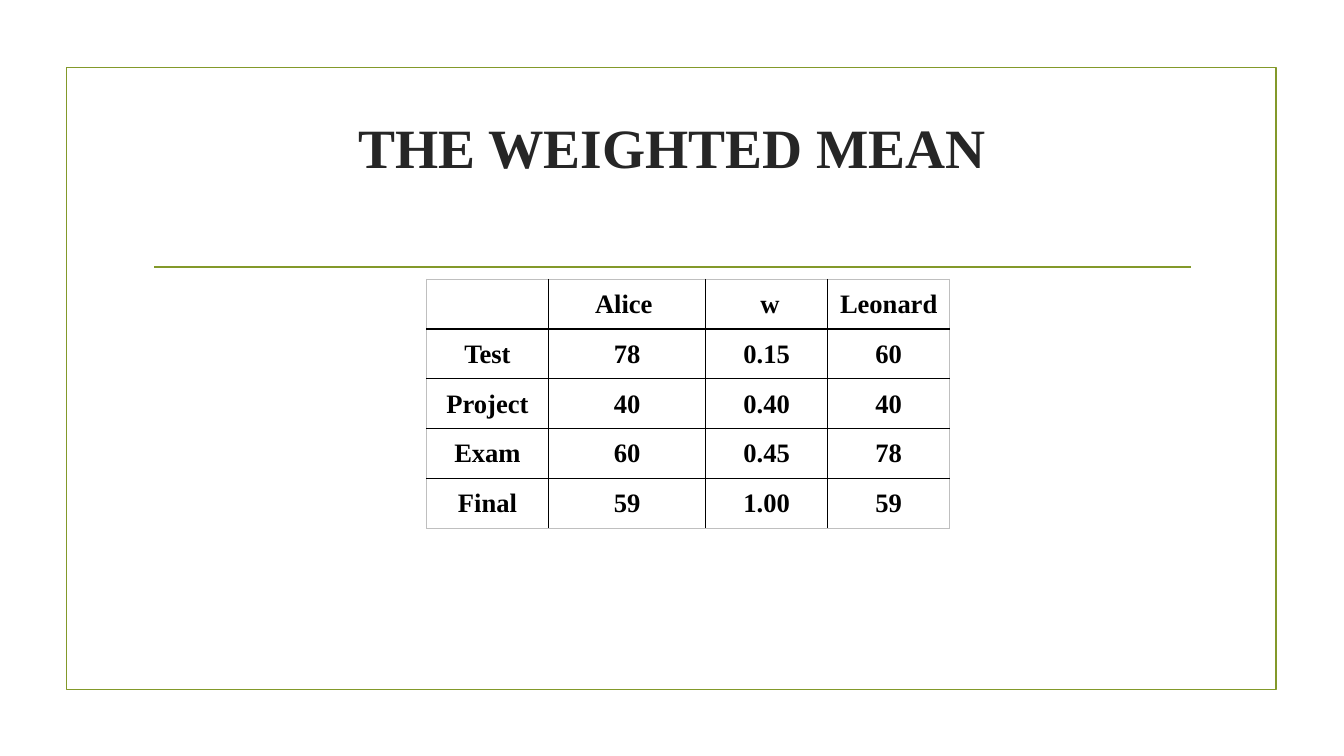
from lxml import etree
from pptx import Presentation
from pptx.dml.color import RGBColor
from pptx.enum.shapes import MSO_CONNECTOR, MSO_SHAPE
from pptx.enum.text import MSO_ANCHOR, PP_ALIGN
from pptx.oxml import parse_xml
from pptx.oxml.ns import nsdecls, qn
from pptx.util import Inches, Pt

COLORS = {"olive": "83992A", "title": "262626", "ink": "000000", "edge": "BFBFBF"}
FONT = "Times New Roman"


def add_bold_run(paragraph, text, size, color):
    run = paragraph.add_run()
    run.text = text
    run.font.name = FONT
    run.font.size = Pt(size)
    run.font.bold = True
    run.font.color.rgb = RGBColor.from_string(COLORS[color])


def set_borders(cell, sides):
    props = cell._tc.get_or_add_tcPr()
    for position, (side, is_outer) in enumerate(sides):
        width, color = (Pt(0.5), "edge") if is_outer else (Pt(1), "ink")
        props.insert(position, parse_xml(
            f'<a:ln{side} {nsdecls("a")} w="{width}"><a:solidFill>'
            f'<a:srgbClr val="{COLORS[color]}"/></a:solidFill></a:ln{side}>'))


prs = Presentation()
prs.slide_width = Inches(13.33)
prs.slide_height = Inches(7.5)
slide = prs.slides.add_slide(prs.slide_layouts[6])
shapes = slide.shapes

frame = shapes.add_shape(MSO_SHAPE.RECTANGLE, Inches(0.66), Inches(0.67), Inches(12), Inches(6.17))
frame.shadow.inherit = False
frame.fill.background()
divider = shapes.add_connector(MSO_CONNECTOR.STRAIGHT, Inches(1.53), Inches(2.65), Inches(11.81), Inches(2.65))
etree.SubElement(divider._element.spPr, qn("a:effectLst"))
for outline in (frame.line, divider.line):
    outline.color.rgb = RGBColor.from_string(COLORS["olive"])
    outline.width = Pt(1.25)

heading = shapes.add_textbox(Inches(1.42), Inches(1.07), Inches(10.5), Inches(1.43)).text_frame
heading.word_wrap = True
heading.vertical_anchor = MSO_ANCHOR.MIDDLE
heading_line = heading.paragraphs[0]
heading_line.alignment = PP_ALIGN.CENTER
heading_line.font.size = Pt(39.6)
add_bold_run(heading_line, "THE WEIGHTED MEAN", 39.6, "title")
heading_line.add_line_break()

marks = [
    ["", "Alice ", " w", "Leonard"],
    ["Test", "78", "0.15", "60"],
    ["Project", "40", "0.40", "40"],
    ["Exam", "60", "0.45", "78"],
    ["Final", "59", "1.00", "59"],
]
column_widths = [1.21, 1.56, 1.21, 1.21]
last_row, last_column = len(marks) - 1, len(column_widths) - 1
grades = shapes.add_table(len(marks), len(column_widths), Inches(4.23), Inches(2.77),
                          Inches(sum(column_widths)), Inches(2.47)).table
grades.first_row = False
grades.horz_banding = False
for column, width in zip(grades.columns, column_widths):
    column.width = Inches(width)

for r, row in enumerate(marks):
    for c, mark in enumerate(row):
        cell = grades.cell(r, c)
        cell.fill.background()
        cell.vertical_anchor = MSO_ANCHOR.MIDDLE
        cell.margin_left = cell.margin_right = cell.margin_top = Inches(0.01)
        cell.margin_bottom = 0
        set_borders(cell, [("L", c == 0), ("R", c == last_column), ("T", r == 0), ("B", r == last_row)])
        if mark:
            entry = cell.text_frame.paragraphs[0]
            entry.alignment = PP_ALIGN.CENTER
            add_bold_run(entry, mark, 19, "ink")

prs.save("out.pptx")
